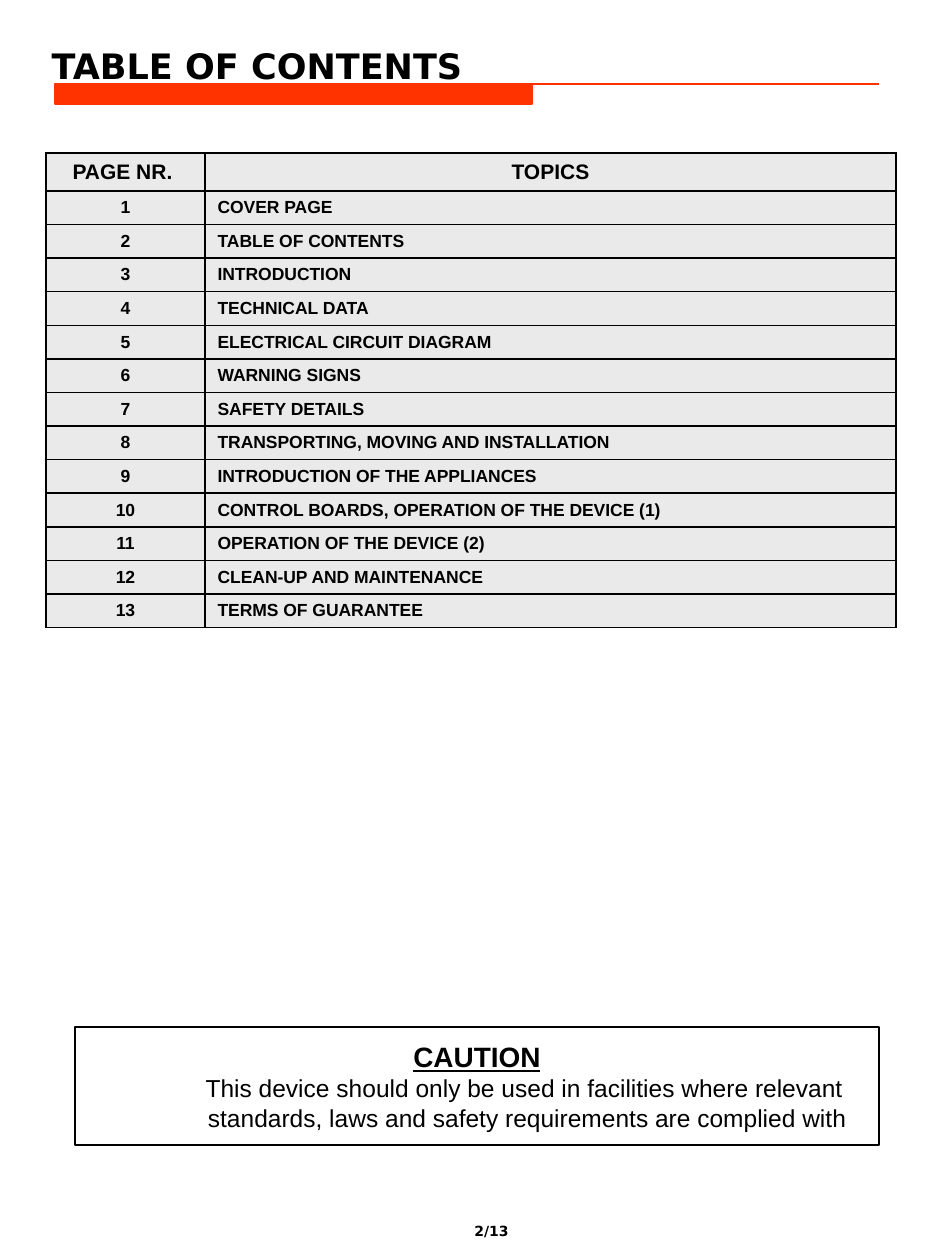
from lxml import etree
from pptx import Presentation
from pptx import util as u
from pptx.dml.color import RGBColor
from pptx.enum import shapes, text
from pptx.oxml import ns

SCALE = 914400 / 126
ORANGE, BLACK, WHITE, GREY = "FF3300", "000000", "FFFFFF", "EAEAEA"
LEFT, MID = text.PP_ALIGN.LEFT, text.PP_ALIGN.CENTER
HANG = 48
TOPICS = [
    "COVER PAGE",
    "TABLE OF CONTENTS",
    "INTRODUCTION",
    "TECHNICAL DATA",
    "ELECTRICAL CIRCUIT DIAGRAM",
    "WARNING SIGNS",
    "SAFETY DETAILS",
    "TRANSPORTING, MOVING AND INSTALLATION",
    "INTRODUCTION OF THE APPLIANCES",
    "CONTROL BOARDS, OPERATION OF THE DEVICE (1)",
    "OPERATION OF THE DEVICE (2)",
    "CLEAN-UP AND MAINTENANCE",
    "TERMS OF GUARANTEE",
]


def px(n):
    return u.Emu(round(n * SCALE))


def rgb(code):
    return RGBColor.from_string(code)


def write(para, words, size, align=LEFT, name="Arial", **extra):
    para.alignment = align
    run = para.add_run()
    run.text = words
    look = {"size": u.Pt(size), "name": name, "bold": True, **extra}
    for key, val in look.items():
        setattr(run.font, key, val)
    run.font.color.rgb = rgb(BLACK)


def indent(para, left, first=0):
    props = para._p.get_or_add_pPr()
    props.set("marL", str(px(left)))
    props.set("indent", str(px(first)))


def add_title(slide):
    title = slide.shapes.title
    place = {"left": 39, "top": 34, "width": 850, "height": 59}
    for key, val in place.items():
        setattr(title, key, px(val))
    frame = title.text_frame
    frame.auto_size = text.MSO_AUTO_SIZE.NONE
    frame.vertical_anchor = text.MSO_ANCHOR.BOTTOM
    write(frame.paragraphs[0], "TABLE OF CONTENTS", 20, name="DejaVu Sans")


def add_rect(slide, box, fill, line):
    rect = slide.shapes.add_shape(shapes.MSO_SHAPE.RECTANGLE, *map(px, box))
    rect.shadow.inherit = False
    rect.fill.solid()
    rect.fill.fore_color.rgb = rgb(fill)
    rect.line.color.rgb = rgb(line)
    rect.line.width = u.Pt(0.75)
    return rect


def add_rule(slide, *ends):
    rule = slide.shapes.add_connector(
        shapes.MSO_CONNECTOR.STRAIGHT, *map(px, ends))
    rule.line.color.rgb = rgb(ORANGE)
    rule.line.width = u.Pt(0.75)
    etree.SubElement(rule._element.spPr, ns.qn("a:effectLst"))


def add_edges(cell):
    """Draw a thin black border on all four sides of the cell."""
    props = cell._tc.get_or_add_tcPr()
    for side in "LRTB":
        edge = etree.SubElement(props, ns.qn("a:ln" + side), w=str(u.Pt(1)))
        fill = etree.SubElement(edge, ns.qn("a:solidFill"))
        etree.SubElement(fill, ns.qn("a:srgbClr"), val=BLACK)


def fill_cell(cell, words, size, align):
    add_edges(cell)
    cell.fill.solid()
    cell.fill.fore_color.rgb = rgb(GREY)
    cell.vertical_anchor = text.MSO_ANCHOR.MIDDLE
    para = cell.text_frame.paragraphs[0]
    indent(para, HANG, -HANG)
    write(para, words, size, align)


def add_topics(slide):
    count, head, body = len(TOPICS), 38, 437
    box = map(px, (46, 153, 850, head + body))
    table = slide.shapes.add_table(count + 1, 2, *box).table
    table.first_row = table.horz_banding = False
    for col, wide in zip(table.columns, (159, 691)):
        col.width = px(wide)
    for row in table.rows:
        row.height = px(body / count)
    table.rows[0].height = px(head)

    for col, words in enumerate(("PAGE NR. ", "TOPICS")):
        fill_cell(table.cell(0, col), words, 12, MID)
    for page, topic in enumerate(TOPICS, 1):
        fill_cell(table.cell(page, 0), str(page), 10, MID)
        fill_cell(table.cell(page, 1), topic, 10, LEFT)


def add_caution(slide):
    frame = add_rect(slide, (75, 1027, 804, 118), WHITE, BLACK).text_frame
    frame.word_wrap = True
    frame.vertical_anchor = text.MSO_ANCHOR.MIDDLE
    write(frame.paragraphs[0], "CAUTION", 16, MID, underline=True)
    lines = (
        (95, "This device should only be used in facilities where relevant"),
        (101, "standards, laws and safety requirements are complied with"),
    )
    for left, words in lines:
        para = frame.add_paragraph()
        indent(para, left)
        write(para, words, 14, MID, bold=False)


def add_number(slide):
    box = slide.shapes.add_textbox(*map(px, (462, 1216, 66, 29)))
    frame = box.text_frame
    frame.word_wrap = False
    write(frame.paragraphs[0], "2/13", 8, name="DejaVu Sans")


def main():
    deck = Presentation()
    deck.slide_width, deck.slide_height = px(945), px(1260)
    slide = deck.slides.add_slide(deck.slide_layouts[5])
    add_title(slide)
    add_topics(slide)
    add_rect(slide, (55, 84, 477, 20), ORANGE, ORANGE)
    add_rule(slide, 532, 84, 879, 84)
    add_number(slide)
    add_caution(slide)
    deck.save("out.pptx")


if __name__ == "__main__":
    main()
